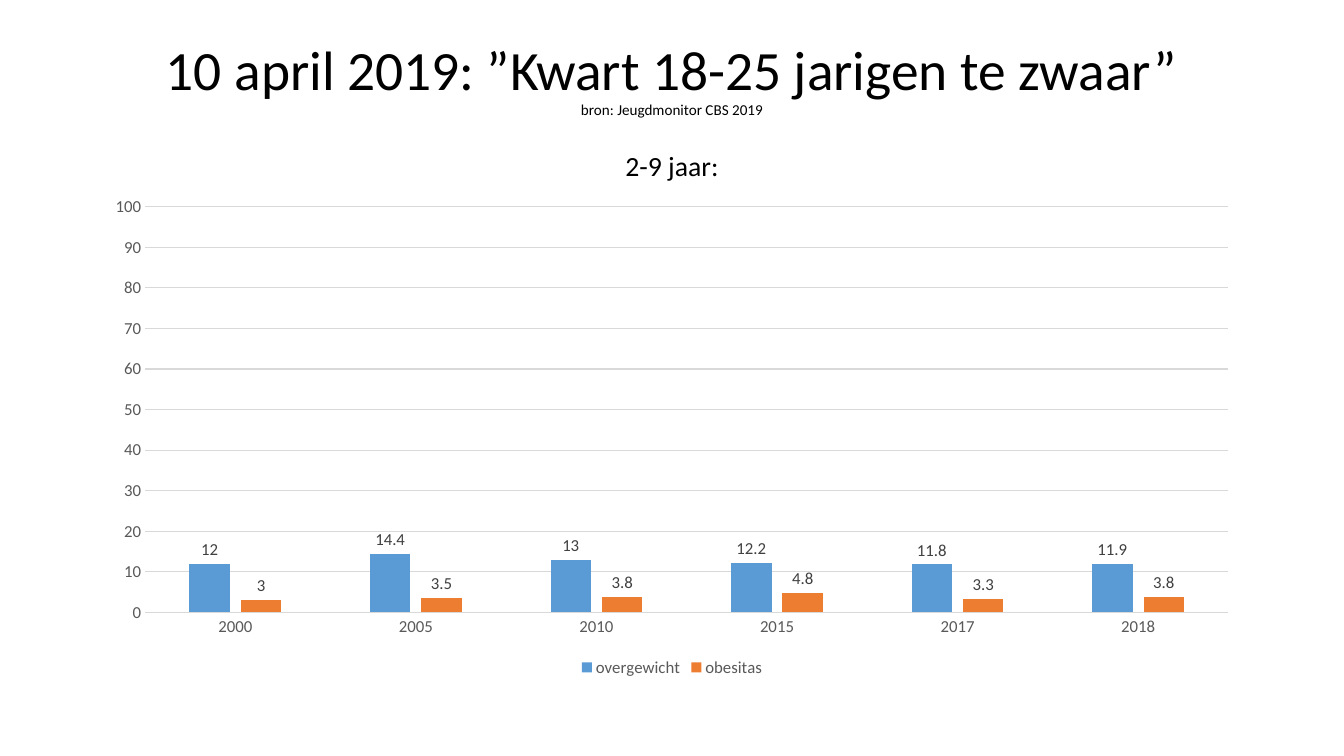
from pptx import Presentation
from pptx.chart.data import CategoryChartData
from pptx.dml.color import RGBColor
from pptx.enum.chart import XL_CHART_TYPE, XL_LABEL_POSITION, XL_LEGEND_POSITION, XL_TICK_MARK
from pptx.enum.text import MSO_ANCHOR, PP_ALIGN
from pptx.util import Emu, Pt

PX = 9525
FONT = "Calibri"
COLORS = {
    "title": "000000",
    "axis": "595959",
    "label": "404040",
    "grid": "D9D9D9",
    "overgewicht": "5B9BD5",
    "obesitas": "ED7D31",
}
YEARS = ["2000", "2005", "2010", "2015", "2017", "2018"]
SERIES = {
    "overgewicht": [12, 14.4, 13, 12.2, 11.8, 11.9],
    "obesitas": [3, 3.5, 3.8, 4.8, 3.3, 3.8],
}


def px(*lengths):
    """Turn pixel lengths into EMU."""
    return [Emu(length * PX) for length in lengths]


def color(name):
    """Look up a named colour."""
    return RGBColor.from_string(COLORS[name])


def style_font(font, size, color_name):
    """Set the face, size and colour of a font."""
    font.name = FONT
    font.size = Pt(size)
    font.color.rgb = color(color_name)


def style_line(line):
    """Give an axis or grid line its thin grey stroke."""
    line.color.rgb = color("grid")
    line.width = Pt(0.75)


def write_text(paragraph, text, size=18, color_name="title", space_before=0):
    """Fill a centred paragraph with formatted text."""
    paragraph.alignment = PP_ALIGN.CENTER
    paragraph.line_spacing = 0.9
    paragraph.space_before = Pt(space_before)
    run = paragraph.add_run()
    run.text = text
    style_font(run.font, size, color_name)


def add_heading(slide):
    """Add the title, its source and the age group."""
    frame = slide.shapes.add_textbox(*px(88, 38, 1104, 139)).text_frame
    frame.word_wrap = True
    frame.vertical_anchor = MSO_ANCHOR.MIDDLE
    write_text(frame.paragraphs[0], "10 april 2019: ”Kwart 18-25 jarigen te zwaar”", size=39.6)
    write_text(frame.add_paragraph(), "bron: Jeugdmonitor CBS 2019", size=10.8)
    write_text(frame.add_paragraph(), "2-9 jaar:", size=19.8, space_before=24)


def style_axes(chart):
    """Format both axes and the gridlines."""
    for axis in (chart.category_axis, chart.value_axis):
        axis.major_tick_mark = XL_TICK_MARK.NONE
        axis.minor_tick_mark = XL_TICK_MARK.NONE
        style_font(axis.tick_labels.font, 12, "axis")
    style_line(chart.category_axis.format.line)
    value_axis = chart.value_axis
    value_axis.minimum_scale = 0
    value_axis.maximum_scale = 100
    value_axis.major_unit = 10
    value_axis.format.line.fill.background()
    style_line(value_axis.major_gridlines.format.line)


def style_series(series):
    """Colour a series and show its values."""
    series.format.fill.solid()
    series.format.fill.fore_color.rgb = color(series.name)
    series.invert_if_negative = False
    labels = series.data_labels
    labels.show_value = True
    labels.position = XL_LABEL_POSITION.OUTSIDE_END
    style_font(labels.font, 12, "label")


def add_weight_chart(slide):
    """Add the column chart of overweight and obesity by year."""
    data = CategoryChartData()
    data.categories = YEARS
    for name, values in SERIES.items():
        data.add_series(name, values)
    frame = slide.shapes.add_chart(
        XL_CHART_TYPE.COLUMN_CLUSTERED, *px(88, 178, 1104, 471), data)
    chart = frame.chart
    chart.has_title = False
    style_font(chart.font, 10, "title")
    chart.has_legend = True
    chart.legend.position = XL_LEGEND_POSITION.BOTTOM
    chart.legend.include_in_layout = False
    style_font(chart.legend.font, 12, "axis")
    plot = chart.plots[0]
    plot.gap_width = 219
    plot.overlap = -27
    plot.vary_by_categories = False
    style_axes(chart)
    for series in plot.series:
        style_series(series)


def main():
    """Build and save the slide."""
    presentation = Presentation()
    presentation.slide_width, presentation.slide_height = px(1280, 720)
    slide = presentation.slides.add_slide(presentation.slide_layouts[6])
    add_heading(slide)
    add_weight_chart(slide)
    presentation.save("out.pptx")


if __name__ == "__main__":
    main()
